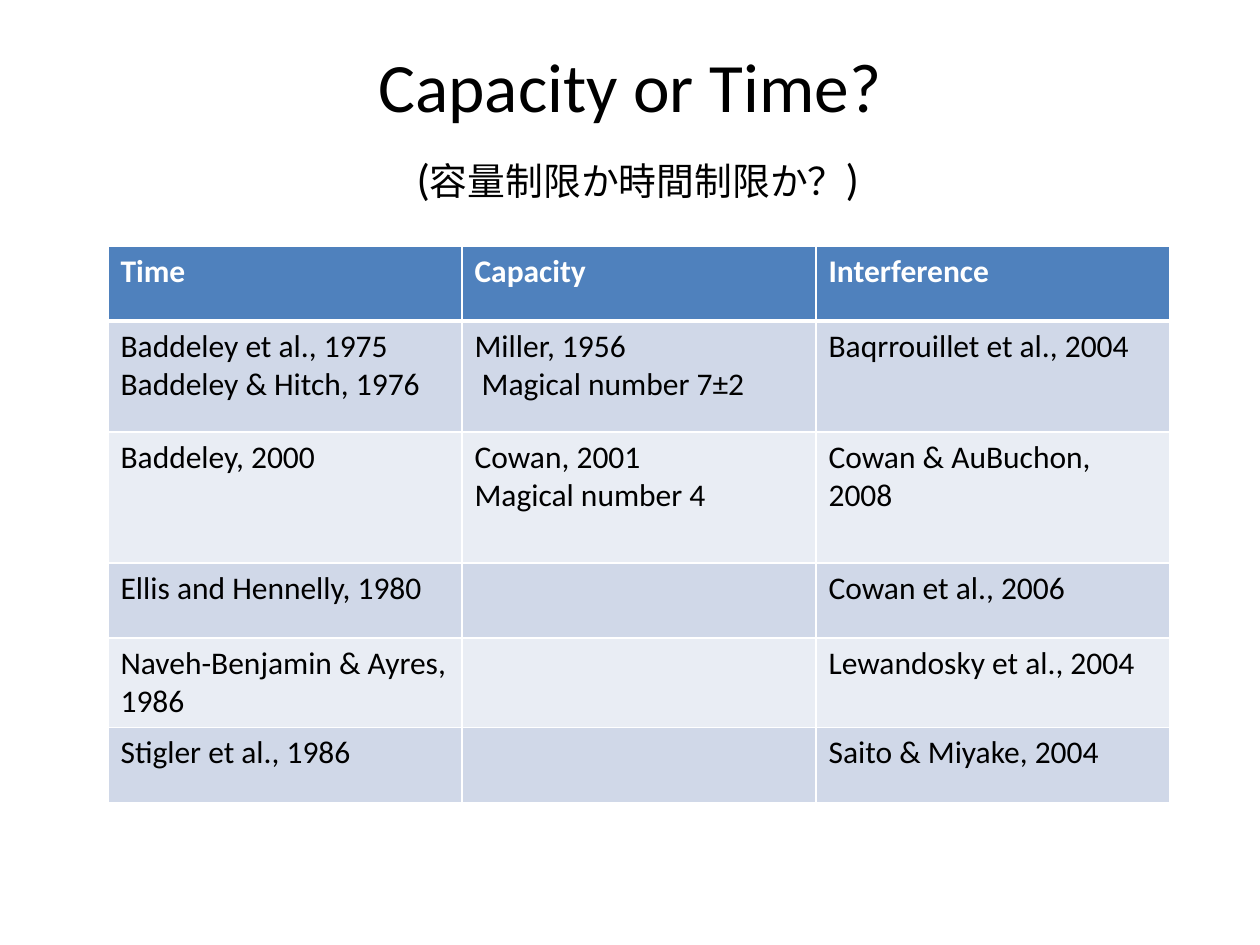
from dataclasses import dataclass

from lxml import etree
from pptx import Presentation
from pptx.dml.color import RGBColor
from pptx.enum.text import MSO_ANCHOR, MSO_AUTO_SIZE, PP_ALIGN
from pptx.oxml.ns import qn
from pptx.util import Emu, Pt

CENTER, MIDDLE, NO_FIT = PP_ALIGN.CENTER, MSO_ANCHOR.MIDDLE, MSO_AUTO_SIZE.NONE
EMU_PER_PX = 914400 / 126
FONT = "Calibri"
BLACK, WHITE = "000000", "FFFFFF"
HEADER_FILL = "4F81BD"
BAND_FILLS = ("D0D8E8", "E9EDF4")
TITLE_BOX = (63, 38, 1134, 176)
TABLE_LEFT, TABLE_TOP, COL_WIDTH = 108, 246, 354
THIN, THICK = 1, 3


@dataclass(frozen=True)
class Row:
    height: int
    cells: tuple[str, str, str]


ROWS = (
    Row(75, ("Time", "Capacity", "Interference")),
    Row(111, ("Baddeley et al., 1975\nBaddeley & Hitch, 1976",
              "Miller, 1956\n Magical number 7±2", "Baqrrouillet et al., 2004")),
    Row(131, ("Baddeley, 2000", "Cowan, 2001\nMagical number 4",
              "Cowan & AuBuchon, 2008")),
    Row(75, ("Ellis and Hennelly, 1980", "", "Cowan et al., 2006")),
    Row(75, ("Naveh-Benjamin & Ayres, 1986", "", "Lewandosky et al., 2004")),
    Row(75, ("Stigler et al., 1986", "", "Saito & Miyake, 2004")),
)


def px(n: int) -> Emu:
    return Emu(round(n * EMU_PER_PX))


def rgb(color: str) -> RGBColor:
    return RGBColor.from_string(color)


def format_font(font, size: float, color: str, bold: bool = False) -> None:
    for name, value in {"name": FONT, "size": Pt(size), "bold": bold}.items():
        setattr(font, name, value)
    font.color.rgb = rgb(color)


def add_run(p, text: str, size: float) -> None:
    r = p.add_run()
    r.text = text
    format_font(r.font, size, BLACK)


def draw_title(s) -> None:
    sp = s.shapes.title
    for name, n in zip(("left", "top", "width", "height"), TITLE_BOX):
        setattr(sp, name, px(n))
    tf = sp.text_frame
    for name, value in {"word_wrap": True, "auto_size": NO_FIT,
                        "vertical_anchor": MIDDLE}.items():
        setattr(tf, name, value)
    p = tf.paragraphs[0]
    p.alignment = CENTER
    add_run(p, "Capacity or Time?", 39.6)
    p.add_line_break()
    for text, size in ((" ", 39.6), ("(", 25.2),
                       ("容量制限か時間制限か？", 21.6), (")", 25.2)):
        add_run(p, text, size)


def set_borders(cell, top: int, bottom: int) -> None:
    tc_pr = cell._tc.get_or_add_tcPr()
    for side, width in (("L", THIN), ("R", THIN), ("T", top), ("B", bottom)):
        ln = etree.SubElement(tc_pr, qn(f"a:ln{side}"), w=str(Pt(width)))
        fill = etree.SubElement(ln, qn("a:solidFill"))
        etree.SubElement(fill, qn("a:srgbClr"), val=WHITE)


def draw_cell(cell, text: str, row: int) -> None:
    header = row == 0
    set_borders(cell, top=THICK if row == 1 else THIN,
                bottom=THICK if header else THIN)
    cell.fill.solid()
    cell.fill.fore_color.rgb = rgb(HEADER_FILL if header else BAND_FILLS[(row - 1) % 2])
    cell.text = text
    for p in cell.text_frame.paragraphs:
        for r in p.runs:
            format_font(r.font, 18, WHITE if header else BLACK, header)


def draw_table(s, rows: tuple[Row, ...]) -> None:
    cols = len(rows[0].cells)
    table = s.shapes.add_table(
        len(rows), cols, px(TABLE_LEFT), px(TABLE_TOP),
        px(cols * COL_WIDTH), px(sum(row.height for row in rows))).table
    for column in table.columns:
        column.width = px(COL_WIDTH)
    for i, row in enumerate(rows):
        table.rows[i].height = px(row.height)
        for j, text in enumerate(row.cells):
            draw_cell(table.cell(i, j), text, i)


def main() -> None:
    prs = Presentation()
    prs.slide_width, prs.slide_height = px(1260), px(945)
    s = prs.slides.add_slide(prs.slide_layouts.get_by_name("Title Only"))
    draw_title(s)
    draw_table(s, ROWS)
    prs.save("out.pptx")


if __name__ == "__main__":
    main()
